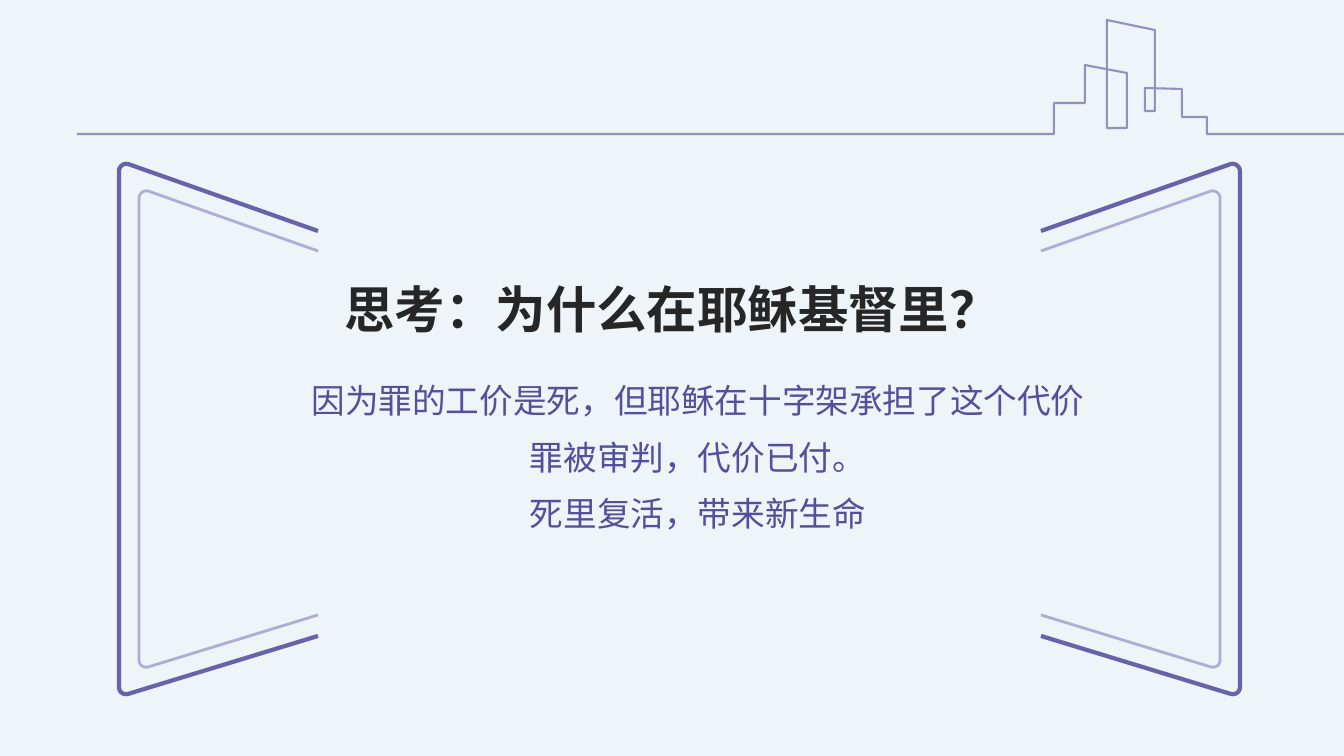
from dataclasses import dataclass

from lxml.etree import SubElement
from pptx import Presentation
from pptx.dml.color import RGBColor
from pptx.enum.text import MSO_ANCHOR as Anchor, PP_ALIGN as Align
from pptx.oxml.ns import qn
from pptx.util import Emu, Pt

EMU_PER_PX = 914400 / 100.8
FONT = "Noto Sans CJK SC"
PURPLE = "524F9B"
MIRROR_SUM = 1359  # left x + right x of mirrored frame points
CORNER_STEPS = 8

Point = tuple[float, float]


@dataclass
class Frame:
    open_x: int
    open_top: int
    open_bottom: int
    side_x: int
    top: int
    bottom: int
    color: str
    width: float


FRAMES = [
    Frame(318, 231, 636, 119, 164, 694, "6763AB", 3),
    Frame(318, 251, 615, 139, 191, 667, "AFADD5", 2),
]

SKYLINE = [
    (1344, 134), (1207, 134), (1207, 117), (1182, 117), (1182, 89), (1145, 88),
    (1145, 111), (1155, 111), (1155, 30), (1107, 20), (1107, 128), (1127, 128),
    (1127, 73), (1085, 65), (1085, 103), (1054, 103), (1054, 134), (77, 134),
]


def px(value: float) -> Emu:
    return Emu(round(value * EMU_PER_PX))


def rgb(color: str) -> RGBColor:
    return RGBColor.from_string(color)


def add_outline(slide, points: list[Point], color: str, width: float, opacity: int = 100):
    """Draw an open, unfilled line through the points."""
    start, *rest = [(px(x), px(y)) for x, y in points]
    builder = slide.shapes.build_freeform(*start)
    builder.add_line_segments(rest, close=False)
    shape = builder.convert_to_shape()
    shape.shadow.inherit = False
    shape.fill.background()
    shape.line.color.rgb = rgb(color)
    shape.line.width = Pt(width)
    if opacity < 100:
        color_element = shape.line._ln.find(".//" + qn("a:srgbClr"))
        SubElement(color_element, qn("a:alpha"), val=str(opacity * 1000))


def corner(start: Point, c1: Point, c2: Point, end: Point) -> list[Point]:
    """Sample a cubic curve."""
    curve = []
    for step in range(CORNER_STEPS + 1):
        t = step / CORNER_STEPS
        weights = ((1 - t) ** 3, 3 * t * (1 - t) ** 2, 3 * t * t * (1 - t), t ** 3)
        controls = (start, c1, c2, end)
        curve.append(tuple(sum(w * p[axis] for w, p in zip(weights, controls))
                           for axis in (0, 1)))
    return curve


def frame_points(frame: Frame) -> list[Point]:
    x, top, bottom = frame.side_x, frame.top, frame.bottom
    return [
        (frame.open_x, frame.open_top),
        *corner((x + 9, top), (x + 4, top - 1), (x, top + 3), (x, top + 7)),
        *corner((x, bottom - 7), (x, bottom - 2), (x + 4, bottom + 1), (x + 9, bottom)),
        (frame.open_x, frame.open_bottom),
    ]


def add_text(slide, lines: list[str], *, left: int, top: int, width: int, height: int,
             size: int, color: str, bold: bool = False, anchor=Anchor.TOP,
             spacing: float = 1.0):
    box = slide.shapes.add_textbox(px(left), px(top), px(width), px(height))
    frame = box.text_frame
    frame.word_wrap = True
    frame.vertical_anchor = anchor
    frame.margin_left = frame.margin_right = frame.margin_top = frame.margin_bottom = 0
    for index, line in enumerate(lines):
        paragraph = frame.add_paragraph() if index else frame.paragraphs[0]
        paragraph.alignment = Align.CENTER
        paragraph.line_spacing = spacing
        run = paragraph.add_run()
        run.text = line
        run.font.size = Pt(size)
        run.font.bold = bold
        run.font.color.rgb = rgb(color)
        run.font.name = FONT
        SubElement(run.font._element, qn("a:ea"), typeface=FONT)


def main():
    presentation = Presentation()
    presentation.slide_width, presentation.slide_height = px(1344), px(756)
    slide = presentation.slides.add_slide(presentation.slide_layouts[6])
    slide.background.fill.solid()
    slide.background.fill.fore_color.rgb = rgb("EEF4F7")

    # Skyline
    add_outline(slide, SKYLINE, PURPLE, 1.5, opacity=60)

    # Title and answer
    add_text(slide, ["思考：为什么在耶稣基督里？"], left=246, top=255, width=852, height=84,
             size=36, color="262626", bold=True, anchor=Anchor.BOTTOM)
    add_text(slide, ["因为罪的工价是死，但耶稣在十字架承担了这个代价",
                     "罪被审判，代价已付。",
                     "死里复活，带来新生命"],
             left=195, top=364, width=1006, height=94, size=24, color=PURPLE, spacing=1.4)

    # Frames on the left and mirrored on the right
    for frame in FRAMES:
        points = frame_points(frame)
        mirrored = [(MIRROR_SUM - x, y) for x, y in points]
        for side in (points, mirrored):
            add_outline(slide, side, frame.color, frame.width)

    presentation.save("out.pptx")


if __name__ == "__main__":
    main()
